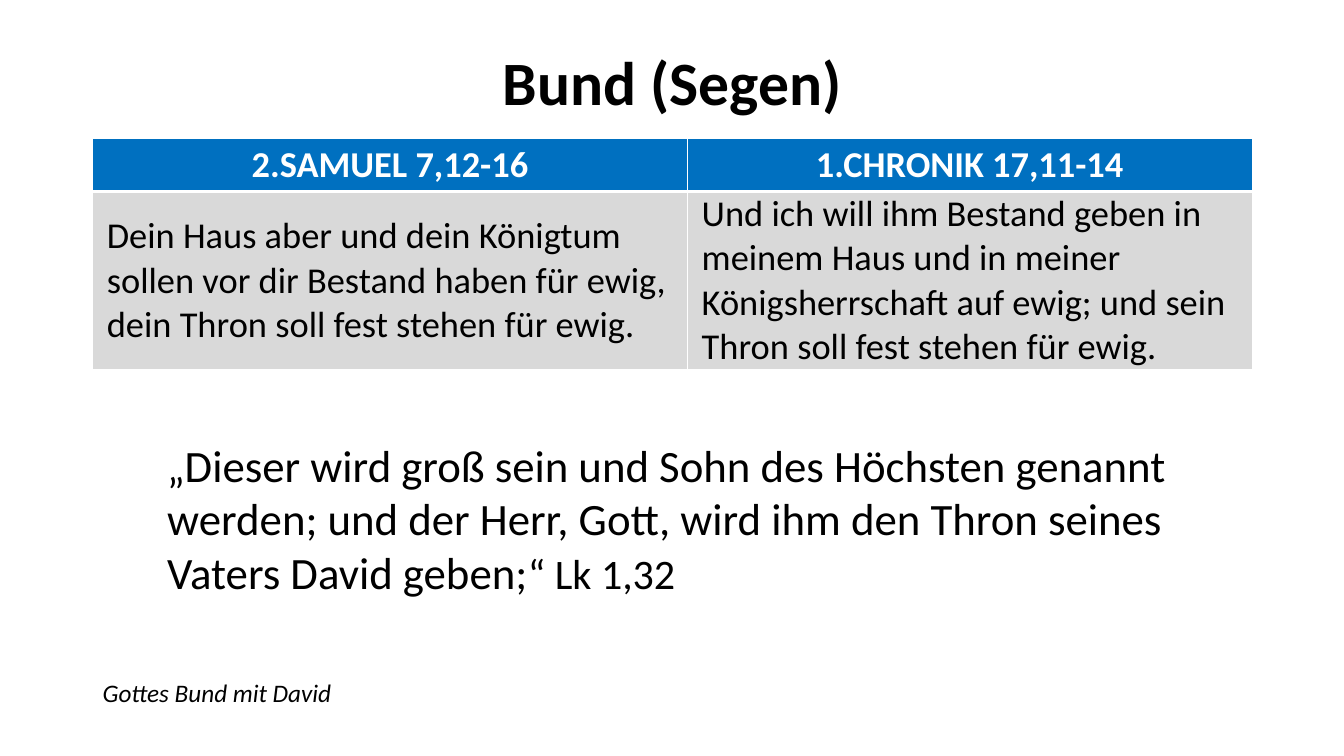
"""Builds a slide comparing two Bible passages on the covenant with David."""
from dataclasses import dataclass

from lxml import etree
from pptx import Presentation
from pptx.dml.color import RGBColor
from pptx.enum.text import MSO_ANCHOR, MSO_AUTO_SIZE, PP_ALIGN
from pptx.oxml.ns import qn
from pptx.util import Inches, Pt

CENTER, LEFT = PP_ALIGN.CENTER, PP_ALIGN.LEFT
MIDDLE, TOP = MSO_ANCHOR.MIDDLE, MSO_ANCHOR.TOP
NO_FIT, GROW = MSO_AUTO_SIZE.NONE, MSO_AUTO_SIZE.SHAPE_TO_FIT_TEXT
TITLE_ONLY = 5


@dataclass(frozen=True)
class Theme:
    font: str = "Calibri"
    text: str = "000000"
    light: str = "FFFFFF"
    header: str = "0070C0"
    body: str = "D9D9D9"
    title_size: int = 44
    table_size: int = 26
    quote_size: int = 32
    mark_size: int = 30
    footer_size: int = 18


THEME = Theme()
TITLE = "Bund (Segen)"
PASSAGES = [
    ["2.SAMUEL 7,12-16", "1.CHRONIK 17,11-14"],
    ["Dein Haus aber und dein Königtum sollen vor dir Bestand haben für ewig, "
     "dein Thron soll fest stehen für ewig.",
     "Und ich will ihm Bestand geben in meinem Haus und in meiner "
     "Königsherrschaft auf ewig; und sein Thron soll fest stehen für ewig."],
]
QUOTE = [
    ("„", THEME.mark_size),
    ("Dieser wird groß sein und Sohn des Höchsten genannt werden; und der Herr, "
     "Gott, wird ihm den Thron seines Vaters David geben;", THEME.quote_size),
    ("“ Lk 1,32", THEME.mark_size),
]
FOOTER = "Gottes Bund mit David"

MARGIN, CONTENT_WIDTH = 0.92, 11.5
TITLE_BOX = (MARGIN, 0.4, CONTENT_WIDTH, 0.89)
QUOTE_BOX = (1.56, 4.29, 10.13, 1.72)
FOOTER_BOX = (MARGIN, 6.67, 2.5, 0.4)
TABLE_TOP = 1.37
COLUMN_WIDTHS = [5.9, 5.6]
ROW_HEIGHTS = [0.53, 1.73]
CELL_INSET = 0.14


def add_run(paragraph, text, size, color=THEME.text, bold=False, italic=False):
    run = paragraph.add_run()
    run.text = text
    font = run.font
    font.name, font.size = THEME.font, Pt(size)
    font.bold, font.italic = bold, italic
    font.color.rgb = RGBColor.from_string(color)


def add_title(slide):
    title = slide.shapes.title
    title.left, title.top, title.width, title.height = map(Inches, TITLE_BOX)
    frame = title.text_frame
    frame.auto_size, frame.vertical_anchor = NO_FIT, MIDDLE
    paragraph = frame.paragraphs[0]
    paragraph.alignment, paragraph.line_spacing = CENTER, 0.9
    add_run(paragraph, TITLE, THEME.title_size, bold=True)


def add_text(slide, box, runs, wrap=True, italic=False):
    frame = slide.shapes.add_textbox(*map(Inches, box)).text_frame
    frame.word_wrap, frame.auto_size, frame.vertical_anchor = wrap, GROW, TOP
    for text, size in runs:
        add_run(frame.paragraphs[0], text, size, italic=italic)


def set_borders(cell, widths):
    properties = cell._tc.get_or_add_tcPr()
    for position, (side, width) in enumerate(widths.items()):
        line = etree.Element(qn(f"a:ln{side}"), w=str(Pt(width)))
        fill = etree.SubElement(line, qn("a:solidFill"))
        etree.SubElement(fill, qn("a:srgbClr"), val=THEME.light)
        properties.insert(position, line)


def fill_cell(cell, text, is_header):
    cell.margin_left = cell.margin_right = Inches(CELL_INSET)
    cell.margin_top = cell.margin_bottom = 0
    cell.vertical_anchor = MIDDLE
    cell.fill.solid()
    cell.fill.fore_color.rgb = RGBColor.from_string(
        THEME.header if is_header else THEME.body)
    paragraph = cell.text_frame.paragraphs[0]
    paragraph.alignment = CENTER if is_header else LEFT
    add_run(paragraph, text, THEME.table_size,
            THEME.light if is_header else THEME.text, bold=is_header)
    divider = 3
    set_borders(cell, {"L": 1, "R": 1, "T": 1 if is_header else divider,
                       "B": divider if is_header else 1})


def add_passages(slide):
    box = (MARGIN, TABLE_TOP, sum(COLUMN_WIDTHS), sum(ROW_HEIGHTS))
    table = slide.shapes.add_table(
        len(ROW_HEIGHTS), len(COLUMN_WIDTHS), *map(Inches, box)).table
    for column, width in zip(table.columns, COLUMN_WIDTHS):
        column.width = Inches(width)
    for row_index, (texts, height) in enumerate(zip(PASSAGES, ROW_HEIGHTS)):
        table.rows[row_index].height = Inches(height)
        for column_index, text in enumerate(texts):
            fill_cell(table.cell(row_index, column_index), text, row_index == 0)


def main():
    presentation = Presentation()
    presentation.slide_width, presentation.slide_height = Inches(13.33), Inches(7.5)
    slide = presentation.slides.add_slide(presentation.slide_layouts[TITLE_ONLY])
    add_title(slide)
    add_passages(slide)
    add_text(slide, FOOTER_BOX, [(FOOTER, THEME.footer_size)], wrap=False, italic=True)
    add_text(slide, QUOTE_BOX, QUOTE)
    presentation.save("out.pptx")


if __name__ == "__main__":
    main()
